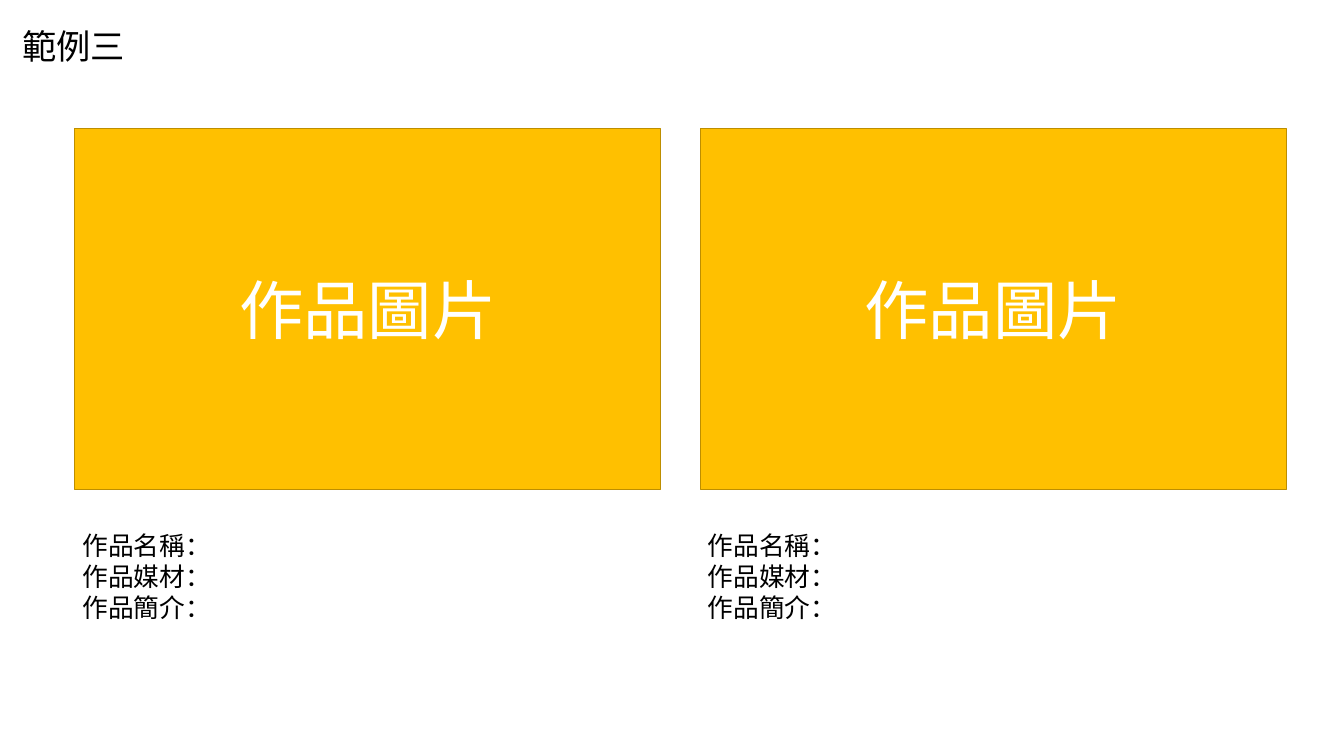
from lxml.etree import SubElement
from pptx import Presentation
from pptx.dml.color import RGBColor as RGB
from pptx.enum.shapes import MSO_SHAPE as Shape
from pptx.enum.text import MSO_ANCHOR as Anchor, MSO_AUTO_SIZE as Fit, PP_ALIGN as Align
from pptx.oxml.ns import qn
from pptx.util import Inches, Pt

FONT = "Noto Sans CJK SC"
BLACK = RGB(0x00, 0x00, 0x00)
WHITE = RGB(0xFF, 0xFF, 0xFF)
GOLD = RGB(0xFF, 0xC0, 0x00)
EDGE = RGB(0xBD, 0x8E, 0x00)
LABELS = ["作品名稱：", "作品媒材：", "作品簡介："]


def write(frame, lines, size, color=BLACK, align=Align.LEFT):
    """Fill a text frame with one paragraph per line."""
    for i, line in enumerate(lines):
        para = frame.paragraphs[0] if i == 0 else frame.add_paragraph()
        para.alignment = align
        run = para.add_run()
        run.text = line
        font = run.font
        font.size, font.name = Pt(size), FONT
        font.color.rgb = color
        SubElement(font._element, qn("a:ea"), typeface=FONT)


def add_label(slide, lines, box, size):
    """Add a text box that grows with its unwrapped lines."""
    frame = slide.shapes.add_textbox(*map(Inches, box)).text_frame
    frame.word_wrap = False
    frame.auto_size = Fit.SHAPE_TO_FIT_TEXT
    write(frame, lines, size)


def add_work(slide, left, top, width, height):
    """Add an artwork panel with its caption 0.48 inches below."""
    panel = slide.shapes.add_shape(
        Shape.RECTANGLE, *map(Inches, (left, top, width, height)))
    panel.shadow.inherit = False
    panel.fill.solid()
    panel.fill.fore_color.rgb = GOLD
    panel.line.color.rgb = EDGE
    panel.line.width = Pt(1)
    frame = panel.text_frame
    frame.vertical_anchor = Anchor.MIDDLE
    write(frame, ["作品圖片"], 60, color=WHITE, align=Align.CENTER)
    add_label(slide, LABELS, (left, top + height + 0.48, 1.88, 1.31), 24)


def main():
    """Build the slide and save it."""
    deck = Presentation()
    deck.slide_width, deck.slide_height = Inches(17.43), Inches(9.8)
    slide = deck.slides.add_slide(deck.slide_layouts[6])
    add_label(slide, ["範例三"], (0.19, 0.28, 1.55, 0.64), 32)
    for left in (0.97, 9.08):
        add_work(slide, left, 1.67, 7.6, 4.67)
    deck.save("out.pptx")


if __name__ == "__main__":
    main()
